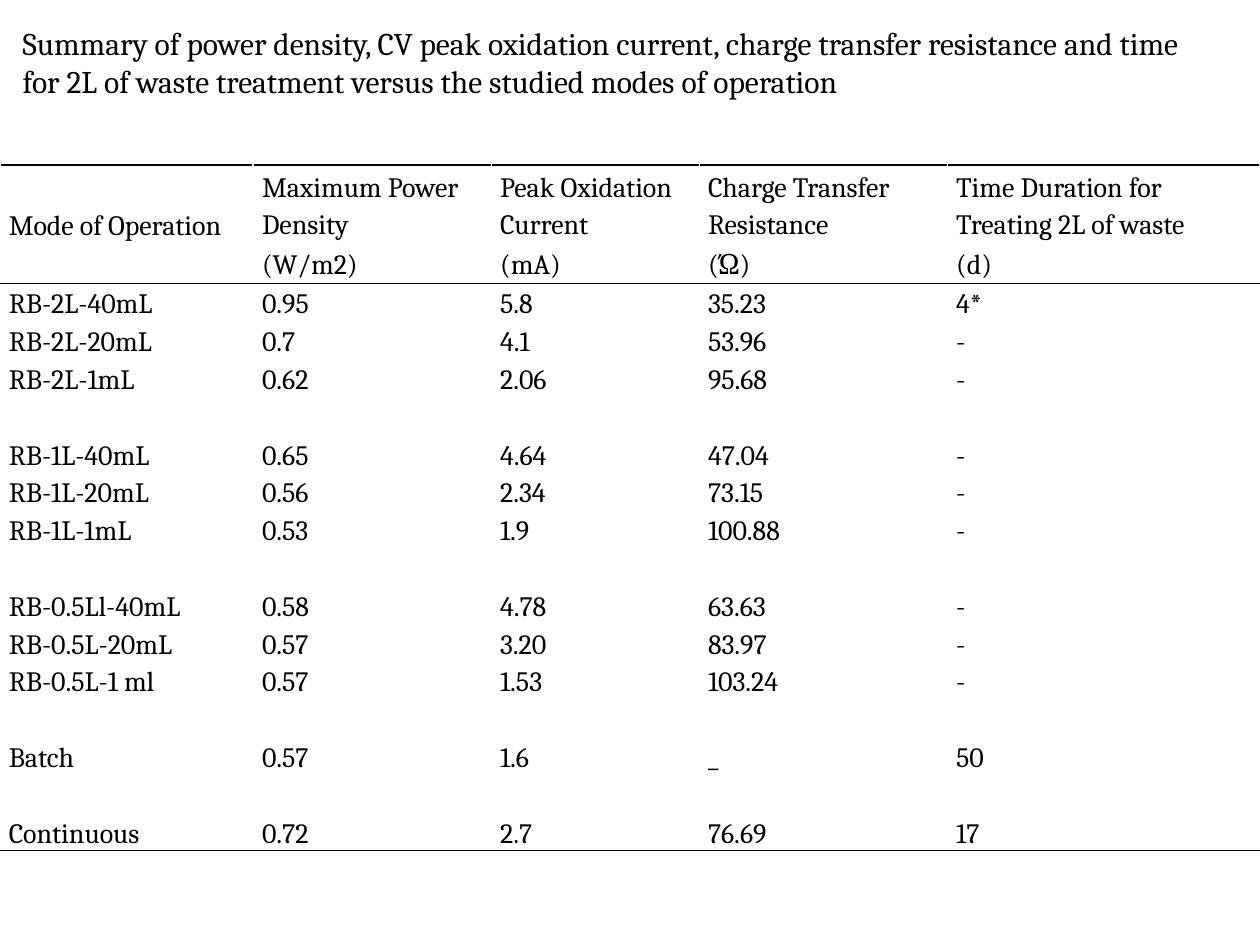
from pptx import Presentation
from pptx.dml.color import RGBColor
from pptx.enum.text import MSO_ANCHOR, MSO_AUTO_SIZE, PP_ALIGN
from pptx.oxml import parse_xml
from pptx.oxml.ns import nsdecls
from pptx.util import Inches, Pt

BLACK = "000000"


def style(para, size):
    para.alignment = PP_ALIGN.LEFT
    para.font.name = "Cambria"
    para.font.size = Pt(size)
    para.font.bold = False
    para.font.color.rgb = RGBColor.from_string(BLACK)


def rule(cell, side):
    """Draw a 1 pt line on the cell's top (T) or bottom (B) edge."""
    line = parse_xml(
        f'<a:ln{side} {nsdecls("a")} w="{Pt(1)}"><a:solidFill>'
        f'<a:srgbClr val="{BLACK}"/></a:solidFill></a:ln{side}>')
    cell._tc.get_or_add_tcPr().insert(0, line)


prs = Presentation()
prs.slide_width, prs.slide_height = Inches(10), Inches(7.5)
slide = prs.slides.add_slide(prs.slide_layouts[5])

title = slide.shapes.title
title.left, title.top = Inches(0.08), Inches(0.14)
title.width, title.height = Inches(9.72), Inches(0.71)
frame = title.text_frame
frame.text = (
    "Summary of power density, CV peak oxidation current, charge transfer "
    "resistance and time for 2L of waste treatment versus the studied modes "
    "of operation")
frame.word_wrap = True
frame.auto_size = MSO_AUTO_SIZE.NONE
frame.vertical_anchor = MSO_ANCHOR.TOP
style(frame.paragraphs[0], 18)

gap = [""] * 5
rows = [
    ["Mode of Operation", "Maximum Power Density\n(W/m2)",
     "Peak Oxidation Current\n(mA)", "Charge Transfer Resistance\n(Ώ)",
     "Time Duration for Treating 2L of waste\n(d)"],
    ["RB-2L-40mL", "0.95", "5.8", "35.23", "4*"],
    ["RB-2L-20mL", "0.7", "4.1", "53.96", "-"],
    ["RB-2L-1mL", "0.62", "2.06", "95.68", "-"],
    gap,
    ["RB-1L-40mL", "0.65", "4.64", "47.04", "-"],
    ["RB-1L-20mL", "0.56", "2.34", "73.15", "-"],
    ["RB-1L-1mL", "0.53", "1.9", "100.88", "-"],
    gap,
    ["RB-0.5Ll-40mL", "0.58", "4.78", "63.63", "-"],
    ["RB-0.5L-20mL", "0.57", "3.20", "83.97", "-"],
    ["RB-0.5L-1 ml", "0.57", "1.53", "103.24", "-"],
    gap,
    ["Batch", "0.57", "1.6", "_", "50"],
    gap,
    ["Continuous", "0.72", "2.7", "76.69", "17"],
]
widths = [2.01, 1.89, 1.65, 1.97, 2.48]
last = len(rows) - 1

table = slide.shapes.add_table(
    len(rows), len(widths), Inches(0), Inches(1.31), Inches(10), Inches(5.5)).table
table.first_row = table.horz_banding = False
for col, width in zip(table.columns, widths):
    col.width = Inches(width)

for r, row in enumerate(rows):
    table.rows[r].height = Inches(0.3 if r else 0.94)
    for c, text in enumerate(row):
        cell = table.cell(r, c)
        cell.text = text
        cell.fill.background()
        cell.vertical_anchor = MSO_ANCHOR.MIDDLE
        cell.margin_left = cell.margin_right = Inches(0.07)
        cell.margin_top = cell.margin_bottom = 0
        for para in cell.text_frame.paragraphs:
            style(para, 16)
            para.line_spacing = 1.15
            para.space_before = para.space_after = Pt(1)
        if r in (0, last):
            rule(cell, "B")
        if r in (0, 1):
            rule(cell, "T")

prs.save("out.pptx")
